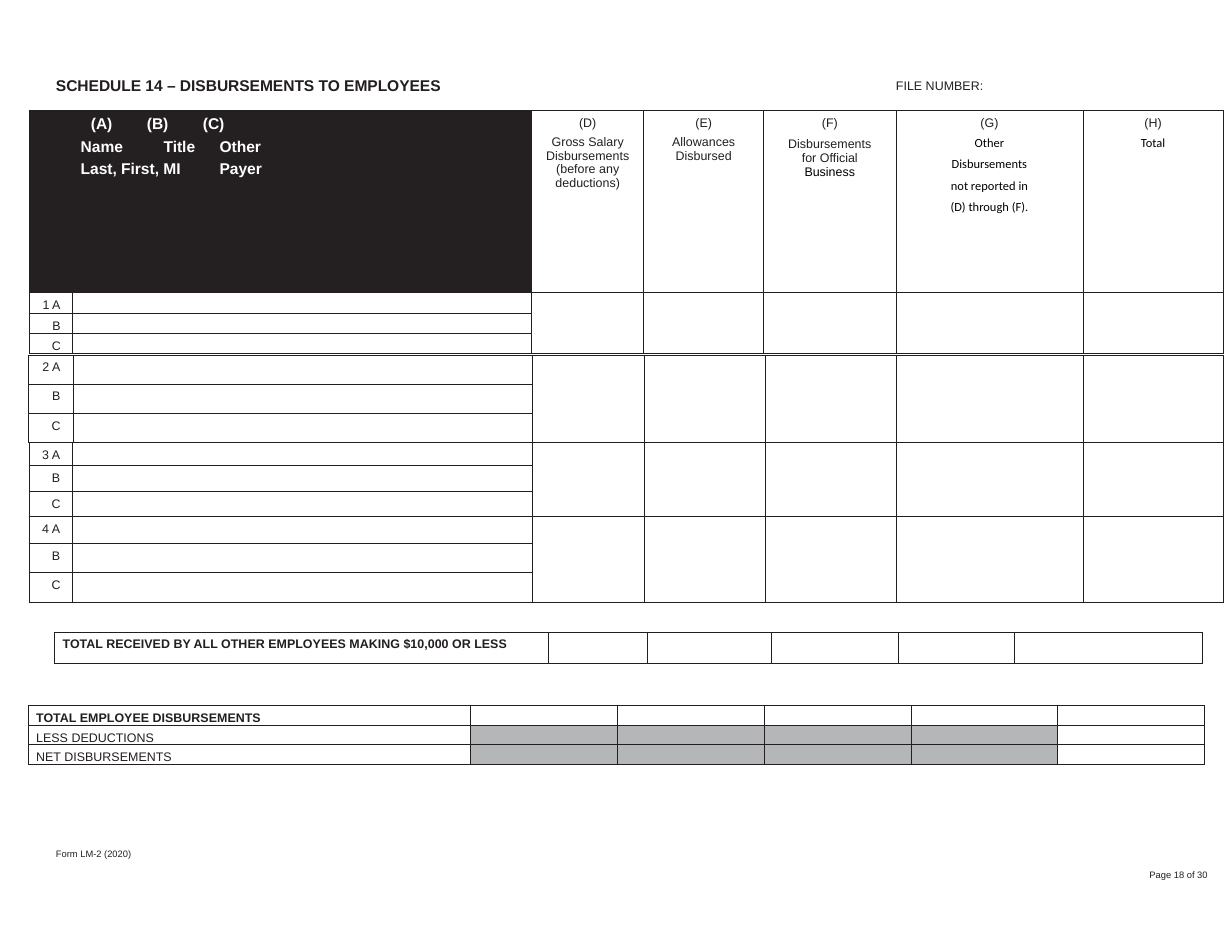
import dataclasses

import lxml.etree
import pptx
import pptx.dml.color
import pptx.enum.text
import pptx.oxml.ns
import pptx.util

Cm = pptx.util.Cm
Pt = pptx.util.Pt
CENTER = pptx.enum.text.PP_ALIGN.CENTER
LEFT = pptx.enum.text.PP_ALIGN.LEFT


@dataclasses.dataclass(frozen=True)
class Theme:
    ink: str = "231F20"
    banner: str = "242021"
    white: str = "FFFFFF"
    black: str = "000000"
    shade: str = "B4B6B8"
    font: str = "Arial"
    note_font: str = "Calibri"
    heading: int = 10
    body: int = 8
    small: int = 6
    rule: float = 0.5


THEME = Theme()


@dataclasses.dataclass
class Line:
    text: str
    size: float = THEME.body
    bold: bool = False
    color: str = THEME.ink
    font: str = THEME.font
    align: object = LEFT
    spacing: object = None
    before: float = 0
    margin: float = 0
    indent: float = 0
    tabs: tuple = ()
    tail: str = ""
    tail_font: str = THEME.font


def add_xml(parent, tag, **attributes):
    return lxml.etree.SubElement(parent, pptx.oxml.ns.qn(tag), **attributes)


def format_span(span, line, font, color):
    span.font.name = font
    span.font.size = Pt(line.size)
    span.font.bold = line.bold
    span.font.color.rgb = pptx.dml.color.RGBColor.from_string(color)


def write(frame, lines):
    frame.text = "\n".join(line.text for line in lines)
    for para, line in zip(frame.paragraphs, lines):
        para.alignment = line.align
        para.space_before = Pt(line.before)
        if line.spacing:
            para.line_spacing = line.spacing
        for span in para.runs:
            format_span(span, line, line.font, line.color)
        if line.tail:
            span = para.add_run()
            span.text = line.tail
            format_span(span, line, line.tail_font, THEME.black)
        properties = para._p.get_or_add_pPr()
        properties.set("marL", str(Cm(line.margin)))
        properties.set("indent", str(Cm(line.indent)))
        if line.tabs:
            stops = add_xml(properties, "a:tabLst")
            for stop in line.tabs:
                add_xml(stops, "a:tab", pos=str(Cm(stop)), algn="l")


def add_label(page, left, top, width, height, line):
    box = page.shapes.add_textbox(Cm(left), Cm(top), Cm(width), Cm(height))
    frame = box.text_frame
    frame.word_wrap = True
    frame.margin_left = frame.margin_top = Cm(0.03)
    frame.margin_right = frame.margin_bottom = 0
    write(frame, [line])


def style_cell(cell):
    cell.margin_left = cell.margin_right = cell.margin_bottom = 0
    cell.margin_top = Cm(0.12)
    properties = cell._tc.get_or_add_tcPr()
    for side in "LRTB":
        border = add_xml(properties, f"a:ln{side}", w=str(Pt(THEME.rule)))
        fill = add_xml(border, "a:solidFill")
        add_xml(fill, "a:srgbClr", val=THEME.ink)
    cell.fill.background()
    add_xml(cell.text_frame.paragraphs[0]._p, "a:endParaRPr", sz=str(THEME.small * 100))


def add_grid(page, left, top, columns, rows):
    frame = page.shapes.add_table(len(rows), len(columns), Cm(left), Cm(top),
                                  Cm(sum(columns)), Cm(sum(rows)))
    table = frame.table
    table.first_row = table.horz_banding = False
    for column, width in zip(table.columns, columns):
        column.width = Cm(width)
    for row, height in zip(table.rows, rows):
        row.height = Cm(height)
    for cell in table.iter_cells():
        style_cell(cell)
    return table


def fill_cell(cell, lines, side=0.0):
    for end in cell._tc.iter(pptx.oxml.ns.qn("a:endParaRPr")):
        end.getparent().remove(end)
    cell.margin_left = cell.margin_right = Cm(side)
    write(cell.text_frame, lines)


def shade_cell(cell, color):
    cell.fill.solid()
    cell.fill.fore_color.rgb = pptx.dml.color.RGBColor.from_string(color)


def fill_group(table, number, first):
    for offset, letter in enumerate("ABC"):
        text = f"{number} A" if offset == 0 else letter
        margin = 0.03 if offset == 0 else 0.25
        line = Line(text, align=CENTER, spacing=Pt(9.2), margin=margin)
        fill_cell(table.cell(first + offset, 0), [line])
    for column in range(2, 7):
        table.cell(first, column).merge(table.cell(first + 2, column))


def fill_banner(table):
    banner = table.cell(0, 0)
    banner.merge(table.cell(0, 1))
    shade_cell(banner, THEME.banner)
    look = dict(size=THEME.heading, bold=True, color=THEME.white)
    body = dict(look, spacing=1.29, margin=0.51, indent=0.66)
    fill_cell(banner, [
        Line("(A)\t(B)\t(C)", margin=1.4, tabs=(4.62, 7.85), **look),
        Line("Name\tTitle\tOther", tabs=(2.54, 5.08), **body),
        Line("Last, First, MI\tPayer", tabs=(7.19,), **body),
    ])


def fill_headings(table):
    note = dict(align=CENTER, spacing=1.38, before=0.1)
    headings = [
        ("(D)", 0.23, Line("Gross Salary Disbursements (before any deductions)",
                           align=CENTER, spacing=0.96, before=4)),
        ("(E)", 0.25, Line("Allowances Disbursed", align=CENTER, before=3.6)),
        ("(F)", 0.46, Line("Disbursements for Official ", align=CENTER,
                           spacing=Pt(9.2), before=4.2, tail="Business")),
        ("(G)", 1.14, Line("Other Disbursements not reported in (D) through (F).",
                           font=THEME.note_font, color=THEME.black, **note)),
    ]
    for column, (letter, side, line) in enumerate(headings, 2):
        fill_cell(table.cell(0, column), [Line(letter, align=CENTER), line], side)
    total = table.cell(0, 6)
    fill_cell(total, [Line("(H) ", tail="Total", tail_font=THEME.note_font, **note)], 1.14)
    total.margin_top = 0


def add_schedule(page):
    table = add_grid(page, 0.66, 2.51, (0.99, 10.41, 2.54, 2.72, 3, 4.24, 3.18),
                     (4.13, 0.46, 0.46, 0.46))
    fill_banner(table)
    fill_headings(table)
    fill_group(table, 1, 1)
    amounts = (2.54, 2.74, 2.97, 4.24, 3.18)
    groups = [
        (2, 0.64, 8.05, (1.02, 10.41), (0.66, 0.66, 0.66)),
        (3, 0.66, 10.03, (0.97, 10.44), (0.53, 0.58, 0.58)),
        (4, 0.66, 11.71, (0.97, 10.44), (0.61, 0.66, 0.69)),
    ]
    for number, left, top, names, rows in groups:
        fill_group(add_grid(page, left, top, names + amounts, rows), number, 0)


def add_totals(page):
    others = add_grid(page, 1.24, 14.33, (11.2, 2.24, 2.82, 2.87, 2.64, 4.27), (0.71,))
    label = dict(spacing=Pt(9.2), margin=0.18)
    fill_cell(others.cell(0, 0), [
        Line("TOTAL RECEIVED BY ALL OTHER EMPLOYEES MAKING $10,000 OR LESS", bold=True, **label)])
    table = add_grid(page, 0.64, 16, (10.03,) + (3.33,) * 5, (0.44,) * 3)
    names = ("TOTAL EMPLOYEE DISBURSEMENTS", "LESS DEDUCTIONS", "NET DISBURSEMENTS")
    for row, name in enumerate(names):
        fill_cell(table.cell(row, 0), [Line(name, bold=row == 0, **label)])
        if row:
            for column in range(1, 5):
                shade_cell(table.cell(row, column), THEME.shade)


def main():
    deck = pptx.Presentation()
    deck.slide_width, deck.slide_height = Cm(27.94), Cm(21.59)
    page = deck.slides.add_slide(deck.slide_layouts[6])
    add_label(page, 1.24, 19.2, 4.6, 0.28, Line("Form LM-2 (2020)", size=THEME.small))
    add_label(page, 26.04, 19.69, 1.5, 0.28, Line("Page 18 of 30", size=THEME.small))
    add_label(page, 1.24, 1.7, 9.1, 0.46,
              Line("SCHEDULE 14 – DISBURSEMENTS TO EMPLOYEES", size=THEME.heading, bold=True))
    add_label(page, 20.29, 1.75, 2.2, 0.41, Line("FILE NUMBER:"))
    add_schedule(page)
    add_totals(page)
    deck.save("out.pptx")


if __name__ == "__main__":
    main()
